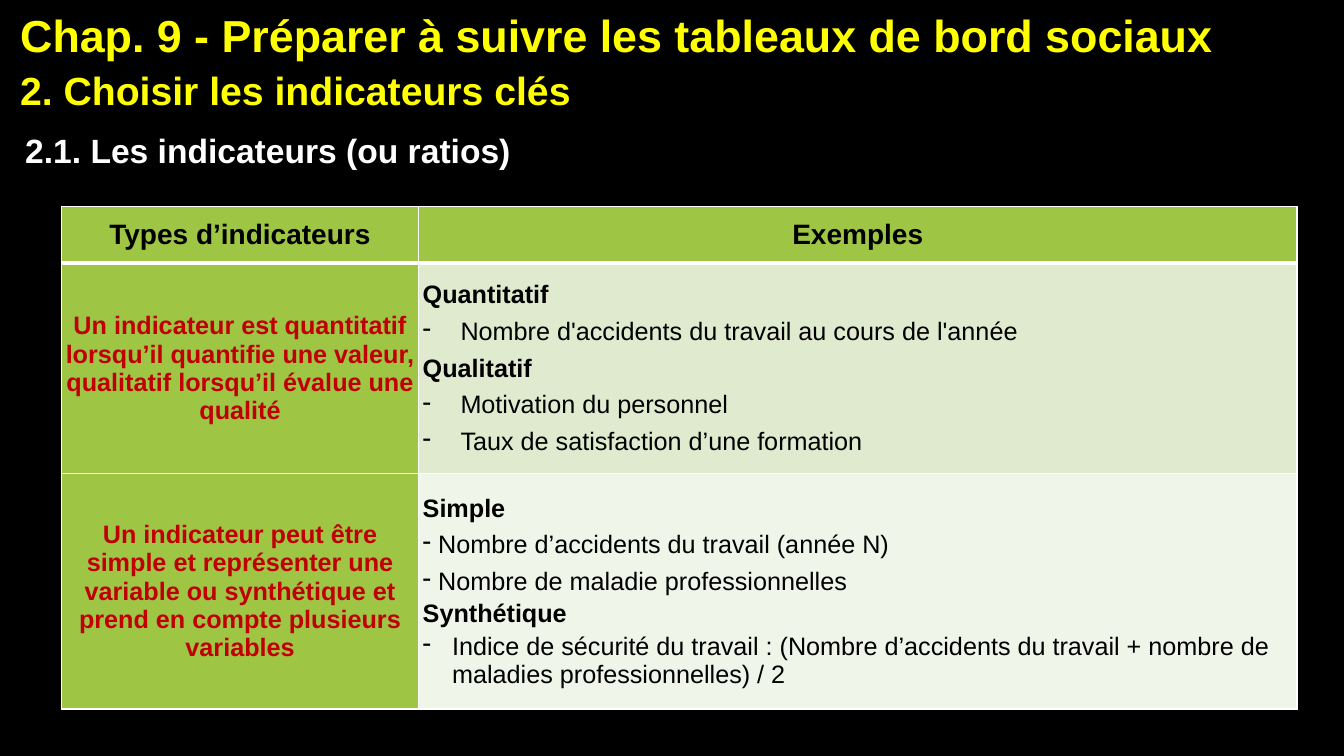
from dataclasses import dataclass

from lxml.etree import SubElement
from pptx import Presentation
from pptx.dml.color import RGBColor
from pptx.enum.text import MSO_ANCHOR, MSO_AUTO_SIZE, PP_ALIGN
from pptx.oxml import parse_xml
from pptx.oxml.ns import nsdecls, qn
from pptx.util import Pt


@dataclass(frozen=True)
class Theme:
    """Colours, type sizes and font of the slide."""
    font: str = "Arial"
    background: str = "000000"
    heading: str = "FFFF00"
    light: str = "FFFFFF"
    dark: str = "000000"
    accent: str = "C00000"
    green: str = "9EC544"
    bands: tuple = ("DFEACF", "F0F5E9")
    chapter_size: int = 32
    section_size: int = 28
    subsection_size: int = 24
    header_size: int = 20
    cell_size: int = 18


THEME = Theme()

HEADERS = ("Types d’indicateurs", "Exemples")
INDICATORS = (
    ("Un indicateur est quantitatif lorsqu’il quantifie une valeur, "
     "qualitatif lorsqu’il évalue une qualité", 3, 3,
     (("Quantitatif", 3, 0, 0),
      ("Nombre d'accidents du travail au cours de l'année", 6, 3, 27),
      ("Qualitatif", 3, 0, 0),
      ("Motivation du personnel", 6, 3, 27),
      ("Taux de satisfaction d’une formation", 3, 3, 27))),
    ("Un indicateur peut être simple et représenter une variable ou "
     "synthétique et prend en compte plusieurs variables", 6, 0,
     (("Simple", 3, 0, 0),
      ("Nombre d’accidents du travail (année N)", 6, 0, 11),
      ("Nombre de maladie professionnelles", 6, 0, 11),
      ("Synthétique", 3, 0, 0),
      ("Indice de sécurité du travail : (Nombre d’accidents du travail + "
       "nombre de maladies professionnelles) / 2", 3, 0, 21))),
)


def apply(target, formats):
    """Set every attribute of a format dict on the target."""
    for attribute, value in formats.items():
        setattr(target, attribute, value)


def write(frame, position, text, size, colour, bold=True, before=0, after=0,
          align=PP_ALIGN.LEFT, indent=0):
    """Write one paragraph, with a hanging dash when it is indented."""
    paragraph = frame.paragraphs[0] if position == 0 else frame.add_paragraph()
    run = paragraph.add_run()
    run.text = text
    apply(paragraph, {"alignment": align, "space_before": Pt(before),
                      "space_after": Pt(after)})
    apply(run.font, {"name": THEME.font, "size": Pt(size), "bold": bold})
    run.font.color.rgb = RGBColor.from_string(colour)
    properties = paragraph._p.get_or_add_pPr()
    properties.set("marL", str(Pt(indent)))
    properties.set("indent", str(-Pt(indent)))
    if indent:
        SubElement(properties, qn("a:buChar"), char="-")
    else:
        SubElement(properties, qn("a:buNone"))


def place(placeholder, box):
    """Move a placeholder to its box and return its cleared text frame."""
    apply(placeholder, dict(zip(("left", "top", "width", "height"), map(Pt, box))))
    frame = placeholder.text_frame
    apply(frame, {"word_wrap": True, "auto_size": MSO_AUTO_SIZE.NONE,
                  "vertical_anchor": MSO_ANCHOR.TOP})
    return frame


def add_headings(slide, box):
    """Fill the title with chapter and section, and the body with the subsection."""
    left, top, width, height = box
    title = place(slide.shapes.title, (left, top, width, height))
    write(title, 0, "Chap. 9 - Préparer à suivre les tableaux de bord sociaux",
          THEME.chapter_size, THEME.heading, before=3, after=3)
    write(title, 1, "2. Choisir les indicateurs clés",
          THEME.section_size, THEME.heading, after=3)
    subsection = place(slide.placeholders[1], (left + 3.6, top + height + 4, 482, 36))
    write(subsection, 0, "2.1. Les indicateurs (ou ratios)",
          THEME.subsection_size, THEME.light, before=6)


def format_cell(cell, fill, top=1, bottom=1):
    """Give a cell its fill, margins and white borders."""
    apply(cell, {"vertical_anchor": MSO_ANCHOR.MIDDLE, "margin_left": Pt(3),
                 "margin_right": Pt(3), "margin_top": 0, "margin_bottom": 0})
    cell.fill.solid()
    cell.fill.fore_color.rgb = RGBColor.from_string(fill)
    properties = cell._tc.get_or_add_tcPr()
    for order, (side, width) in enumerate(zip("LRTB", (1, 1, top, bottom))):
        properties.insert(order, parse_xml(
            f'<a:ln{side} {nsdecls("a")} w="{Pt(width)}"><a:solidFill>'
            f'<a:srgbClr val="{THEME.light}"/></a:solidFill></a:ln{side}>'))


def add_indicator_table(slide, box):
    """Draw the table of indicator types and their examples."""
    left, top, width, height = box
    table = slide.shapes.add_table(len(INDICATORS) + 1, len(HEADERS),
                                   *map(Pt, box)).table
    type_width, header_height, first_height = 255, 40.5, 150.5
    for column, extent in zip(table.columns, (type_width, width - type_width)):
        column.width = Pt(extent)
    row_heights = (header_height, first_height, height - header_height - first_height)
    for row, extent in zip(table.rows, row_heights):
        row.height = Pt(extent)

    for column, header in enumerate(HEADERS):
        cell = table.cell(0, column)
        format_cell(cell, THEME.green, bottom=3)
        write(cell.text_frame, 0, header, THEME.header_size, THEME.dark,
              before=2, after=2, align=PP_ALIGN.CENTER)

    for row, (definition, before, after, examples) in enumerate(INDICATORS, 1):
        top_border = 3 if row == 1 else 1
        type_cell, example_cell = table.cell(row, 0), table.cell(row, 1)
        format_cell(type_cell, THEME.green, top=top_border)
        format_cell(example_cell, THEME.bands[row - 1], top=top_border)
        write(type_cell.text_frame, 0, definition, THEME.cell_size, THEME.accent,
              before=before, after=after, align=PP_ALIGN.CENTER)
        for position, (text, space_before, space_after, indent) in enumerate(examples):
            write(example_cell.text_frame, position, text, THEME.cell_size,
                  THEME.dark, bold=not indent, before=space_before,
                  after=space_after, indent=indent)


def main():
    """Build the slide and save it."""
    presentation = Presentation()
    apply(presentation, {"slide_width": Pt(960), "slide_height": Pt(540)})
    slide = presentation.slides.add_slide(presentation.slide_layouts[1])
    slide.background.fill.solid()
    slide.background.fill.fore_color.rgb = RGBColor.from_string(THEME.background)
    add_headings(slide, (7.2, 2.2, 897, 83))
    add_indicator_table(slide, (44, 147.5, 882.5, 359))
    presentation.save("out.pptx")


if __name__ == "__main__":
    main()
